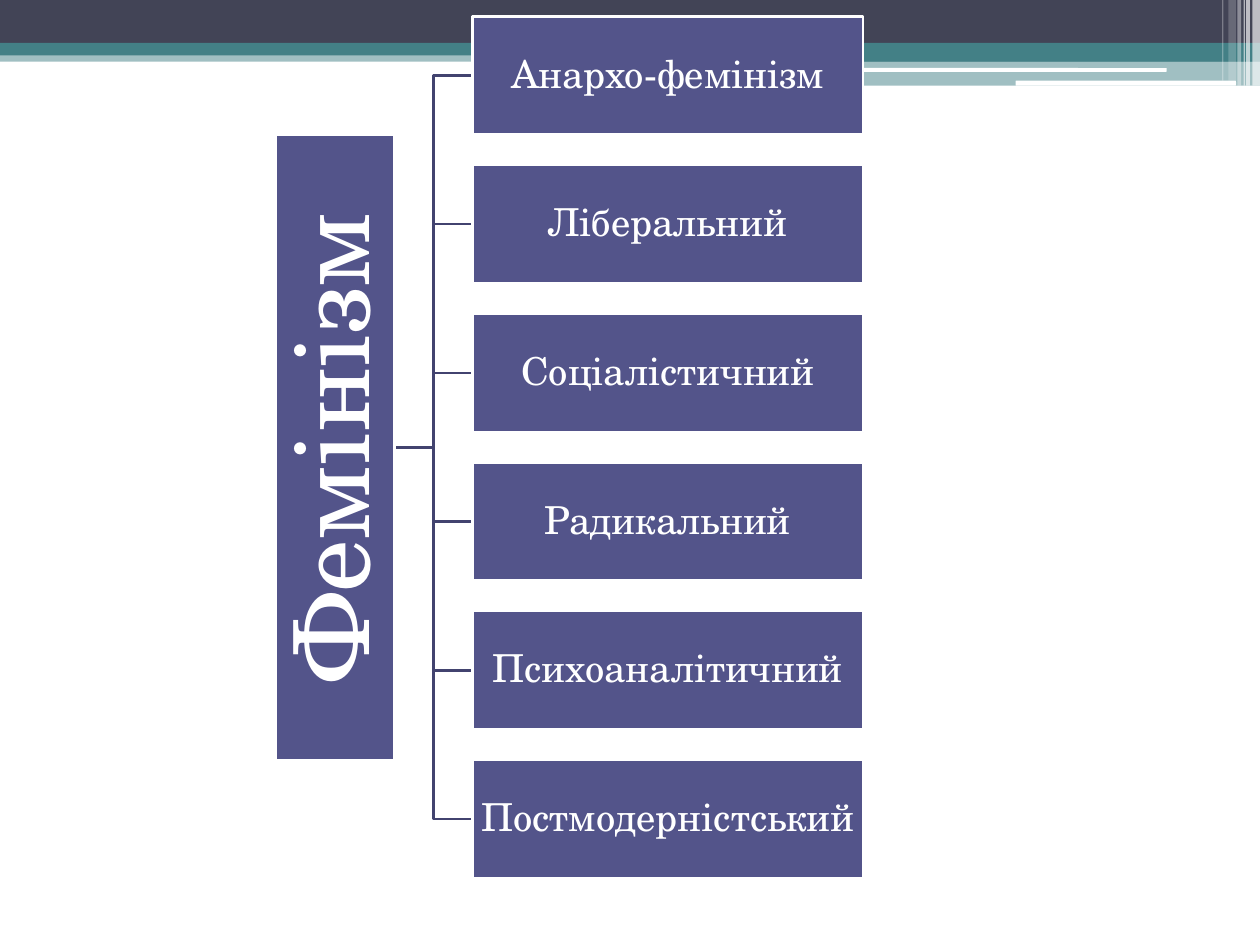
from lxml import etree
from pptx import Presentation
from pptx.dml.color import RGBColor
from pptx.enum.shapes import MSO_CONNECTOR, MSO_SHAPE
from pptx.enum.text import MSO_ANCHOR, PP_ALIGN
from pptx.oxml.ns import qn
from pptx.util import Inches, Pt

RECT, ROUNDED = MSO_SHAPE.RECTANGLE, MSO_SHAPE.ROUNDED_RECTANGLE
ELBOW = MSO_CONNECTOR.ELBOW
CENTER, MIDDLE = PP_ALIGN.CENTER, MSO_ANCHOR.MIDDLE

FONT = "TeX Gyre Schola"
COLORS = {"navy": "424456", "teal": "438086", "box": "53548A",
          "link": "42436F", "white": "FFFFFF"}

ROOT = "Фемінізм"
BRANCHES = ["Анархо-фемінізм", "Ліберальний", "Соціалістичний",
            "Радикальний", "Психоаналітичний", "Постмодерністський"]

# Header bands: shape, left, top, width, height, colour, opacity in percent
BANDS = [
    (RECT, 0, 0.4, 10, 0.09, "teal", 50),
    (RECT, 0, 0, 10, 0.34, "navy", 100),
    (RECT, 0, 0.34, 10, 0.1, "teal", 100),
    (RECT, 5.92, 0.39, 4.08, 0.1, "teal", 100),
    (RECT, 5.92, 0.48, 4.08, 0.2, "teal", 50),
    (ROUNDED, 5.91, 0.54, 3.35, 0.03, "white", 100),
    (ROUNDED, 8.06, 0.64, 1.75, 0.04, "white", 100),
]
# Vertical stripes in the corner: left, width, height, opacity in percent
STRIPES = [(9.94, 0.06, 0.68, 65), (9.89, 0.03, 0.68, 65),
           (9.87, 0.01, 0.68, 60), (9.82, 0.03, 0.68, 40),
           (9.75, 0.06, 0.64, 20), (9.7, 0.01, 0.64, 30)]

BOX_HEIGHT = 0.94
BRANCH_LEFT, BRANCH_TOP, BRANCH_WIDTH, BRANCH_STEP = 3.75, 0.13, 3.1, 1.18
ROOT_LENGTH, ROOT_RIGHT = 4.97, 3.13
ROOT_MIDDLE = BRANCH_TOP + (BRANCH_STEP * (len(BRANCHES) - 1) + BOX_HEIGHT) / 2


def rgb(name):
    return RGBColor.from_string(COLORS[name])


def add_filled(slide, kind, left, top, width, height, color, opacity=100):
    shape = slide.shapes.add_shape(
        kind, Inches(left), Inches(top), Inches(width), Inches(height))
    shape.shadow.inherit = False
    shape.fill.solid()
    shape.fill.fore_color.rgb = rgb(color)
    shape.line.fill.background()
    if opacity < 100:
        fill_color = shape.fill._xPr.find(qn("a:solidFill"))[0]
        etree.SubElement(fill_color, qn("a:alpha"), val=str(opacity * 1000))
    return shape


def add_box(slide, label, left, top, width, size, inset):
    box = add_filled(slide, RECT, left, top, width, BOX_HEIGHT, "box")
    box.line.color.rgb = rgb("white")
    box.line.width = Pt(1.5)
    frame = box.text_frame
    frame.text = label
    frame.word_wrap = True
    frame.vertical_anchor = MIDDLE
    frame.margin_left = frame.margin_right = Inches(inset)
    frame.margin_top = frame.margin_bottom = Inches(inset)
    paragraph = frame.paragraphs[0]
    paragraph.alignment = CENTER
    paragraph.line_spacing = 0.9
    font = paragraph.runs[0].font
    font.name, font.size, font.color.rgb = FONT, Pt(size), rgb("white")
    return box


def add_link(slide, branch_middle):
    """Elbow line from the root box to one branch."""
    link = slide.shapes.add_connector(
        ELBOW, Inches(ROOT_RIGHT), Inches(ROOT_MIDDLE),
        Inches(BRANCH_LEFT), Inches(branch_middle))
    link.line.color.rgb = rgb("link")
    link.line.width = Pt(1.5)
    etree.SubElement(link._element.spPr, qn("a:effectLst"))


def main():
    prs = Presentation()
    prs.slide_width, prs.slide_height = Inches(10), Inches(7.5)
    slide = prs.slides.add_slide(prs.slide_layouts[6])

    for band in BANDS:
        add_filled(slide, *band)
    for left, width, height, opacity in STRIPES:
        add_filled(slide, RECT, left, 0, width, height, "white", opacity)

    tops = [BRANCH_TOP + i * BRANCH_STEP for i in range(len(BRANCHES))]
    for top in tops:
        add_link(slide, top + BOX_HEIGHT / 2)

    # The root is turned about its centre, so it is placed by that centre
    root = add_box(slide, ROOT, ROOT_RIGHT - (BOX_HEIGHT + ROOT_LENGTH) / 2,
                   ROOT_MIDDLE - BOX_HEIGHT / 2, ROOT_LENGTH, 60, 0.04)
    root.rotation = 270
    for label, top in zip(BRANCHES, tops):
        add_box(slide, label, BRANCH_LEFT, top, BRANCH_WIDTH, 22, 0.02)

    prs.save("out.pptx")


if __name__ == "__main__":
    main()
